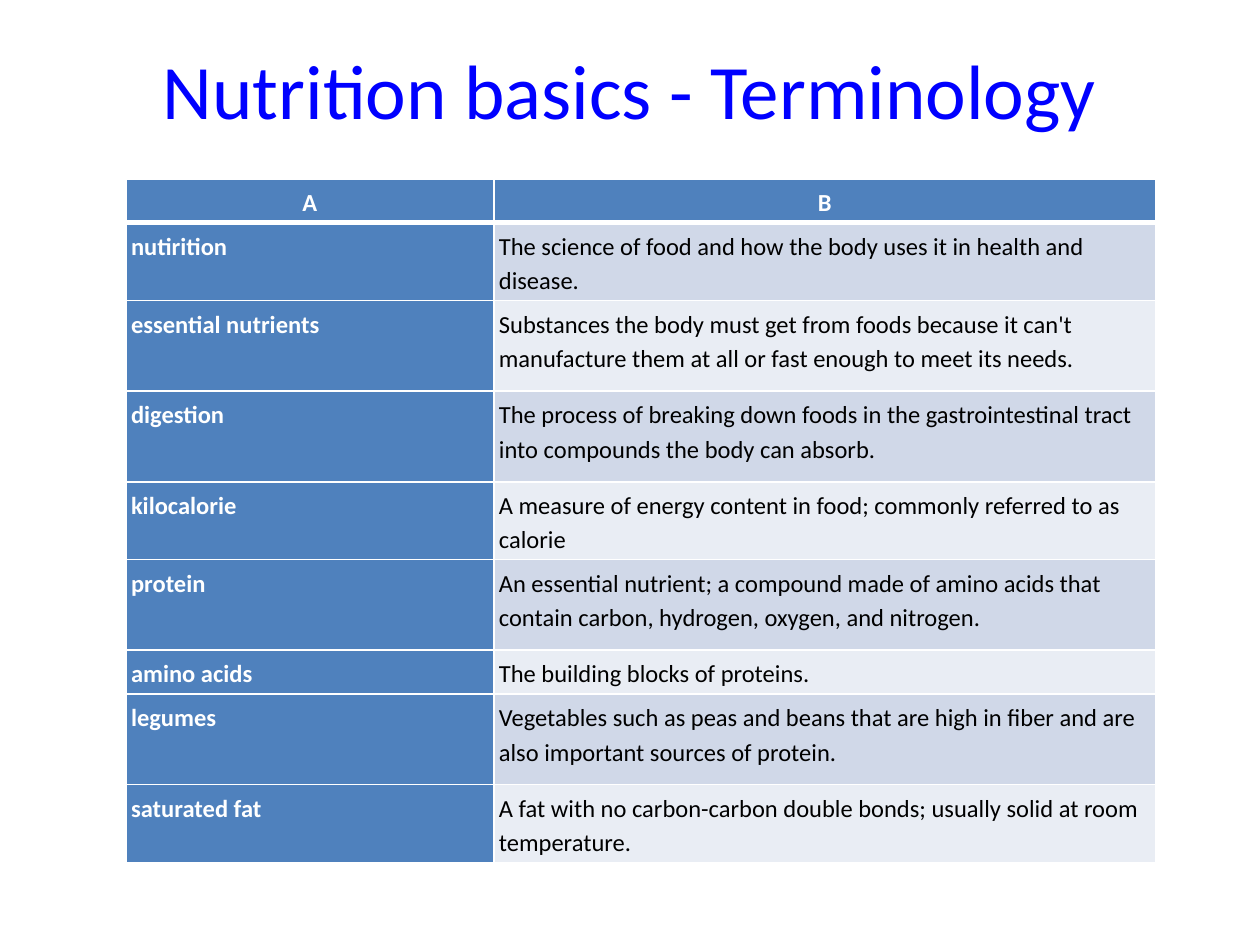
from lxml import etree
from pptx import Presentation
from pptx.dml.color import RGBColor
from pptx.enum import text
from pptx.oxml import ns
from pptx.util import Inches, Pt

FONT = "Calibri"
BLUE = RGBColor(0x00, 0x00, 0xFF)
HEADING_FILL = RGBColor(0x4F, 0x81, 0xBD)
BANDS = (RGBColor(0xD0, 0xD8, 0xE8), RGBColor(0xE9, 0xED, 0xF4))
WHITE = RGBColor(0xFF, 0xFF, 0xFF)
BLACK = RGBColor(0x00, 0x00, 0x00)

COLUMN_WIDTHS = (2.92, 5.25)
ONE_LINE, TWO_LINES, TALL = 0.29, 0.5, 0.72

# Term, definition and minimum row height
TERMS = [
    ("A", "B", ONE_LINE),
    ("nutirition", "The science of food and how the body uses it in health "
     "and disease.", TWO_LINES),
    ("essential nutrients", "Substances the body must get from foods because "
     "it can't manufacture them at all or fast enough to meet its needs.", TALL),
    ("digestion", "The process of breaking down foods in the gastrointestinal "
     "tract into compounds the body can absorb.", TALL),
    ("kilocalorie", "A measure of energy content in food; commonly referred "
     "to as calorie", TWO_LINES),
    ("protein", "An essential nutrient; a compound made of amino acids that "
     "contain carbon, hydrogen, oxygen, and nitrogen.", TALL),
    ("amino acids", "The building blocks of proteins.", ONE_LINE),
    ("legumes", "Vegetables such as peas and beans that are high in fiber and "
     "are also important sources of protein.", TALL),
    ("saturated fat", "A fat with no carbon-carbon double bonds; usually solid "
     "at room temperature.", TWO_LINES),
]


def write(frame, words, *, size, color, bold=False,
          align=text.PP_ALIGN.LEFT, spacing=1.0):
    paragraph = frame.paragraphs[0]
    paragraph.alignment = align
    paragraph.line_spacing = spacing
    run = paragraph.add_run()
    run.text = words
    run.font.name = FONT
    run.font.size = Pt(size)
    run.font.bold = bold
    run.font.color.rgb = color


def set_borders(cell, bottom):
    """Draw white borders; the bottom one has its own width in points."""
    properties = cell._tc.get_or_add_tcPr()
    widths = {"lnL": 1, "lnR": 1, "lnT": 1, "lnB": bottom}
    for position, (side, width) in enumerate(widths.items()):
        line = etree.Element(ns.qn(f"a:{side}"), w=str(Pt(width)))
        fill = etree.SubElement(line, ns.qn("a:solidFill"))
        etree.SubElement(fill, ns.qn("a:srgbClr"), val=str(WHITE))
        properties.insert(position, line)


def add_title(slide, words):
    title = slide.shapes.add_textbox(
        Inches(0.5), Inches(0.08), Inches(9), Inches(1.25))
    title.text_frame.word_wrap = True
    title.text_frame.vertical_anchor = text.MSO_ANCHOR.MIDDLE
    write(title.text_frame, words, size=44, color=BLUE,
          align=text.PP_ALIGN.CENTER)


def fill_cell(cell, words, row, column):
    is_header = row == 0
    is_heading = is_header or column == 0
    cell.margin_left = cell.margin_right = Inches(0.04)
    cell.margin_top = cell.margin_bottom = Inches(0.04)
    cell.vertical_anchor = (
        text.MSO_ANCHOR.MIDDLE if is_header else text.MSO_ANCHOR.TOP)
    cell.fill.solid()
    cell.fill.fore_color.rgb = (
        HEADING_FILL if is_heading else BANDS[(row - 1) % 2])
    set_borders(cell, bottom=3 if is_header else 1)
    write(cell.text_frame, words, size=14, bold=is_heading, spacing=1.15,
          color=WHITE if is_heading else BLACK,
          align=text.PP_ALIGN.CENTER if is_header else text.PP_ALIGN.LEFT)


def add_terms(slide, terms):
    table = slide.shapes.add_table(
        len(terms), len(COLUMN_WIDTHS), Inches(1), Inches(1.42),
        Inches(sum(COLUMN_WIDTHS)), Inches(5.39)).table
    table.horz_banding = False
    table.first_col = True
    for column, width in zip(table.columns, COLUMN_WIDTHS):
        column.width = Inches(width)
    for row, (term, definition, height) in enumerate(terms):
        table.rows[row].height = Inches(height)
        for column, words in enumerate((term, definition)):
            fill_cell(table.cell(row, column), words, row, column)


def main():
    deck = Presentation()
    deck.slide_width, deck.slide_height = Inches(10), Inches(7.5)
    slide = deck.slides.add_slide(deck.slide_layouts[6])

    # Heading and glossary
    add_title(slide, "Nutrition basics - Terminology")
    add_terms(slide, TERMS)

    deck.save("out.pptx")


if __name__ == "__main__":
    main()
